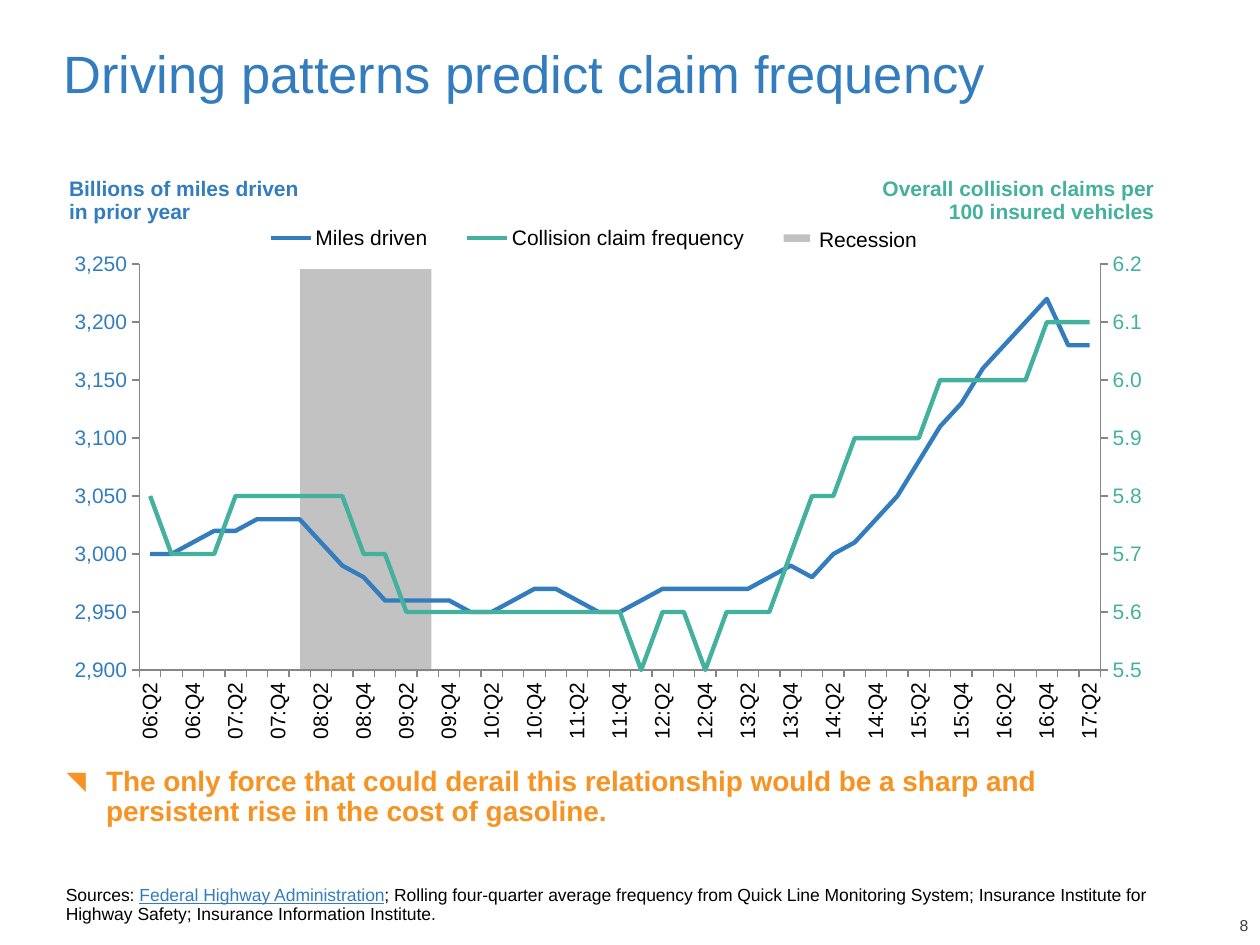
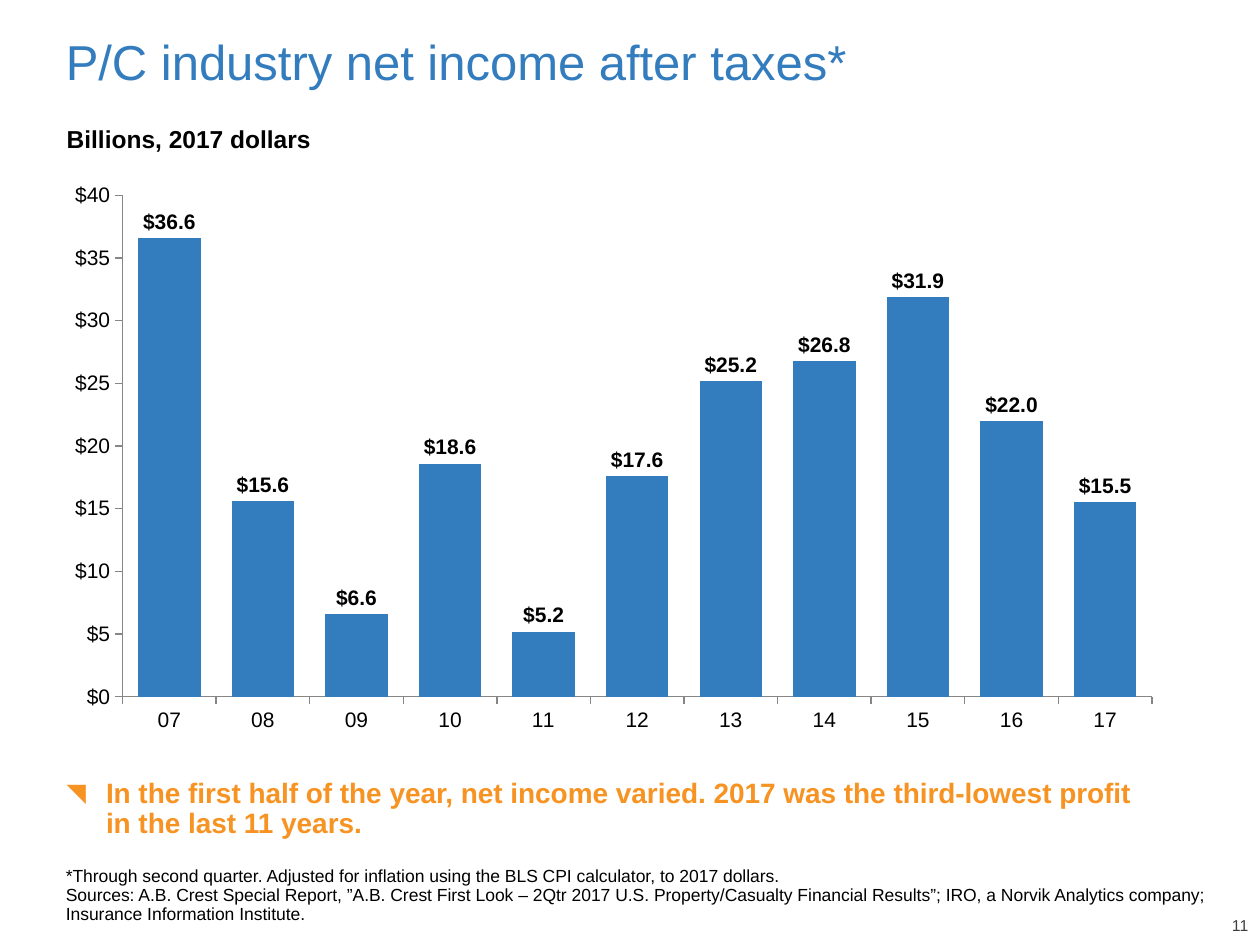
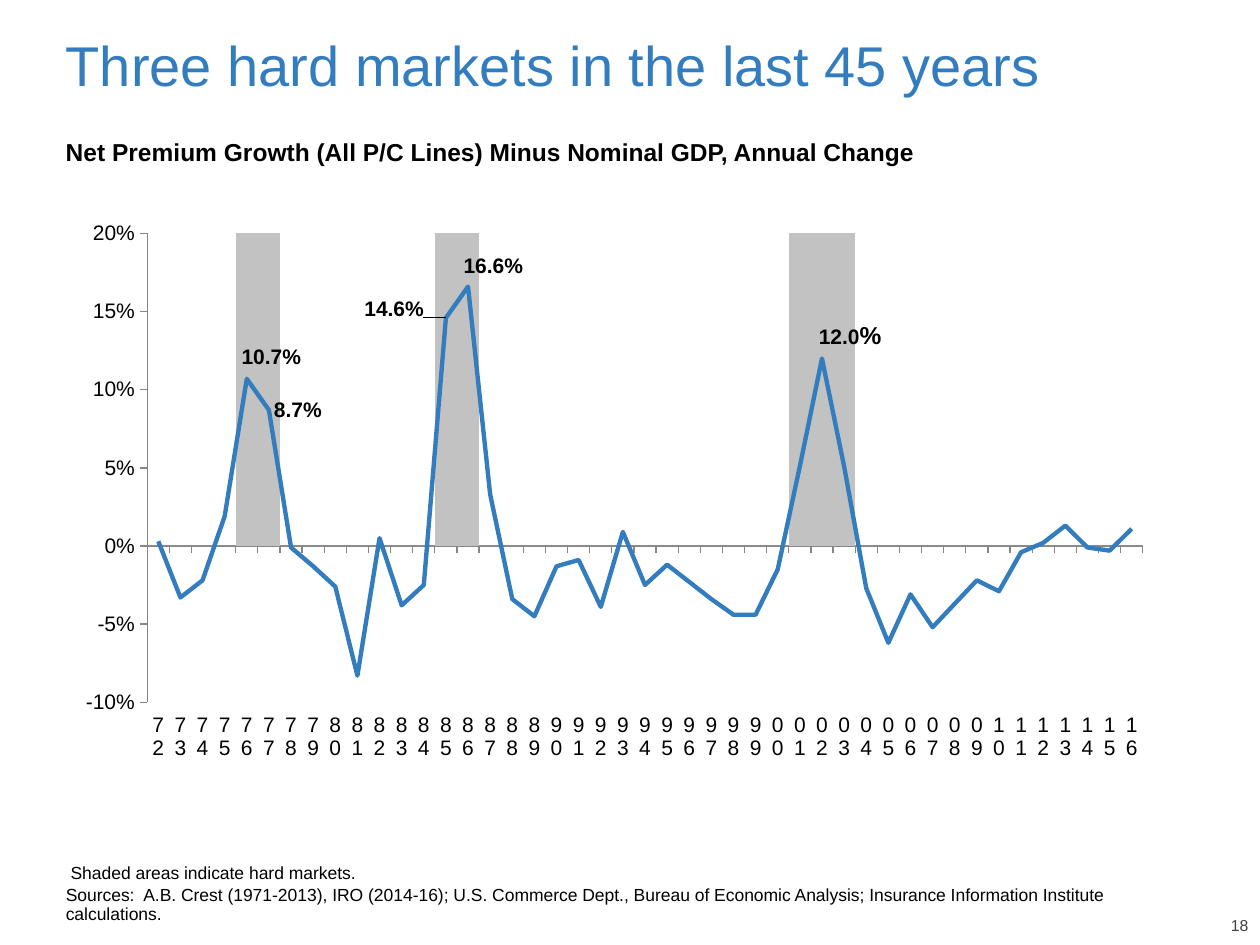
from copy import deepcopy
from lxml import etree
from pptx import Presentation
from pptx.chart.axis import ValueAxis
from pptx.chart.data import CategoryChartData
from pptx.dml.color import RGBColor
from pptx.enum.chart import (XL_CHART_TYPE, XL_LABEL_POSITION, XL_LEGEND_POSITION,
                             XL_MARKER_STYLE, XL_TICK_LABEL_POSITION, XL_TICK_MARK)
from pptx.enum.shapes import MSO_SHAPE
from pptx.enum.text import MSO_ANCHOR, PP_ALIGN
from pptx.oxml import parse_xml
from pptx.oxml.ns import qn
from pptx.util import Pt

LINE, COLUMN = XL_CHART_TYPE.LINE, XL_CHART_TYPE.COLUMN_CLUSTERED
LEFT, RIGHT = XL_LABEL_POSITION.LEFT, XL_LABEL_POSITION.RIGHT
ABOVE = XL_LABEL_POSITION.OUTSIDE_END
BOTTOM = XL_LEGEND_POSITION.BOTTOM
BARE = XL_MARKER_STYLE.NONE
LOW = XL_TICK_LABEL_POSITION.LOW
OUT = XL_TICK_MARK.OUTSIDE
RECT = MSO_SHAPE.RECTANGLE
TOP, MID, BASE = MSO_ANCHOR.TOP, MSO_ANCHOR.MIDDLE, MSO_ANCHOR.BOTTOM
FLUSH = PP_ALIGN.RIGHT

FONT = "Arial"
BLUE, GREEN, ORANGE = "337DBE", "43B19E", "F69322"
GRAY, BLACK, DARK, RULE = "C2C2C2", "000000", "404040", "868686"
NS = ('xmlns:c="http://schemas.openxmlformats.org/drawingml/2006/chart" '
      'xmlns:a="http://schemas.openxmlformats.org/drawingml/2006/main"')

QUARTERS = [f"{n // 4:02}:Q{n % 4 + 1}" for n in range(25, 70)]
MILES = [3000, 3000, 3010, 3020, 3020, 3030, 3030, 3030, 3010, 2990, 2980, 2960,
         2960, 2960, 2960, 2950, 2950, 2960, 2970, 2970, 2960, 2950, 2950, 2960,
         2970, 2970, 2970, 2970, 2970, 2980, 2990, 2980, 3000, 3010, 3030, 3050,
         3080, 3110, 3130, 3160, 3180, 3200, 3220, 3180, 3180]
CLAIMS = [5.8, 5.7, 5.7, 5.7, 5.8, 5.8, 5.8, 5.8, 5.8, 5.8, 5.7, 5.7,
          5.6, 5.6, 5.6, 5.6, 5.6, 5.6, 5.6, 5.6, 5.6, 5.6, 5.6, 5.5,
          5.6, 5.6, 5.5, 5.6, 5.6, 5.6, 5.7, 5.8, 5.8, 5.9, 5.9, 5.9,
          5.9, 6.0, 6.0, 6.0, 6.0, 6.0, 6.1, 6.1, 6.1]
INCOME = {"07": 36.6, "08": 15.6, "09": 6.6, "10": 18.6, "11": 5.2, "12": 17.6,
          "13": 25.2, "14": 26.8, "15": 31.9, "16": 22.0, "17": 15.5}
YEARS = range(1972, 2017)
HARD = {1976, 1977, 1985, 1986, 2001, 2002, 2003}
GROWTH = [0.003, -0.033, -0.022, 0.019, 0.107, 0.087, -0.001, -0.013, -0.026,
          -0.083, 0.005, -0.038, -0.025, 0.146, 0.166, 0.033, -0.034, -0.045,
          -0.013, -0.009, -0.039, 0.009, -0.025, -0.012, -0.023, -0.034, -0.044,
          -0.044, -0.015, 0.051, 0.12, 0.051, -0.027, -0.062, -0.031, -0.052,
          -0.037, -0.022, -0.029, -0.004, 0.002, 0.013, -0.001, -0.003, 0.011]
PEAKS = [(131, 194.4, [("10.7%", {})]),
         (257.8, 142.6, [("16.6%", {})]),
         (460.8, 181, [("12.0", {}), ("%", {"size": 14})])]

PAGES = [
    {"title": "Driving patterns predict claim frequency", "size": 30,
     "spot": (29.2, 23.8), "page": "8", "gap": 2, "wide": 666,
     "note": [[("Sources: ", {}),
               ("Federal Highway Administration", {"color": BLUE, "line": True}),
               ("; Rolling four-quarter average frequency from Quick Line Monitoring "
                "System; Insurance Institute for Highway Safety; Insurance "
                "Information Institute.", {})]],
     "claim": (434.9, "The only force that could derail this relationship would be "
                      "a sharp and persistent rise in the cost of gasoline.")},
    {"title": "P/C industry net income after taxes*", "size": 28,
     "spot": (30.5, 18), "page": "11", "gap": 0, "wide": 666,
     "note": [[("*Through second quarter. Adjusted for inflation using the BLS CPI "
                "calculator, to 2017 dollars.", {})],
              [("Sources: A.B. Crest Special Report, ”A.B. Crest First Look – 2Qtr "
                "2017 U.S. Property/Casualty Financial Results”; IRO, a Norvik "
                "Analytics company; Insurance Information Institute.", {})]],
     "claim": (441.8, "In the first half of the year, net income varied. 2017 was "
                      "the third-lowest profit in the last 11 years.")},
    {"title": "Three hard markets in the last 45 years", "size": 32,
     "spot": (30.5, 18), "page": "18", "gap": 2, "wide": 646.6,
     "note": [[(" Shaded areas indicate hard markets.", {})],
              [("Sources:  A.B. Crest (1971-2013), IRO (2014-16); U.S. Commerce "
                "Dept., Bureau of Economic Analysis; Insurance Information "
                "Institute calculations.", {})]],
     "claim": None},
]


def rgb(code):
    return RGBColor.from_string(code)


def style(font, size, color, bold=False):
    font.name, font.size, font.bold = FONT, Pt(size), bold
    font.color.rgb = rgb(color)


def write(slide, box, paras, size, color=BLACK, bold=False, anchor=TOP, align=None,
          pad=(7.2, 3.6), gap=0, wrap=True, space=0.9):
    frame = slide.shapes.add_textbox(*map(Pt, box)).text_frame
    frame.word_wrap, frame.vertical_anchor = wrap, anchor
    frame.margin_left = frame.margin_right = Pt(pad[0])
    frame.margin_top = frame.margin_bottom = Pt(pad[1])
    if isinstance(paras, str):
        paras = [[(paras, {})]]
    for i, runs in enumerate(paras):
        para = frame.add_paragraph() if i else frame.paragraphs[0]
        para.line_spacing, para.space_before, para.alignment = space, Pt(gap), align
        for words, look in runs:
            run = para.add_run()
            run.text = words
            style(run.font, look.get("size", size), look.get("color", color), bold)
            run.font.underline = look.get("line", False)
    return frame


def block(slide, box):
    shape = slide.shapes.add_shape(RECT, *map(Pt, box))
    shape.shadow.inherit = False
    shape.fill.solid()
    shape.fill.fore_color.rgb = rgb(GRAY)
    shape.line.fill.background()


def frame_page(slide, page):
    left, top = page["spot"]
    write(slide, (left, top, 666, 74.9), page["title"], page["size"], BLUE)
    write(slide, (30.5, 496, page["wide"], 32.4), page["note"], 10, anchor=BASE,
          pad=(7.2, 0), gap=page["gap"])
    write(slide, (678.7, 524.9, 34.6, 9.4), page["page"], 9, DARK, anchor=BASE,
          align=FLUSH, pad=(0, 0))
    if page["claim"]:
        top, words = page["claim"]
        frame = write(slide, (31, top, 629.3, 40), words, 16, ORANGE, True, gap=6)
        props = frame.paragraphs[0]._p.get_or_add_pPr()
        props.set("marL", str(Pt(22.5)))
        props.set("indent", str(-Pt(22.5)))
        for tag, key, val in (("a:buSzPct", "val", "90000"),
                              ("a:buFont", "typeface", FONT),
                              ("a:buChar", "char", "◥")):
            etree.SubElement(props, qn(tag)).set(key, val)


def layout(spots, inner=False):
    target = '<c:layoutTarget val="inner"/>' if inner else ""
    modes = '<c:xMode val="edge"/><c:yMode val="edge"/>'
    parts = "".join(f'<c:{k} val="{v}"/>' for k, v in zip("xywh", spots))
    return parse_xml(f"<c:layout {NS}><c:manualLayout>{target}{modes}{parts}"
                     "</c:manualLayout></c:layout>")


def clear():
    return parse_xml(f"<c:spPr {NS}><a:noFill/><a:ln><a:noFill/></a:ln></c:spPr>")


def scale(axis, low, high, step, form, color=BLACK):
    axis.minimum_scale, axis.maximum_scale, axis.major_unit = low, high, step
    axis.has_major_gridlines = False
    axis.tick_labels.number_format = form
    axis.tick_labels.number_format_is_linked = False
    style(axis.tick_labels.font, 12, color)


def plot(slide, kind, box, area, cats, rows, limits):
    data = CategoryChartData()
    data.categories = cats
    for name, vals in rows:
        data.add_series(name, vals)
    chart = slide.shapes.add_chart(kind, *map(Pt, box), data).chart
    chart.has_title = chart.has_legend = False
    style(chart.font, 12, BLACK)
    scale(chart.value_axis, *limits)
    style(chart.category_axis.tick_labels.font, 12, BLACK)
    for axis in (chart.category_axis, chart.value_axis):
        axis.major_tick_mark = OUT
        axis.format.line.color.rgb = rgb(RULE)
        axis.format.line.width = Pt(0.75)
    chart.plots[0].vary_by_categories = False
    space = chart._chartSpace
    space.find(qn("c:chart")).addnext(clear())
    zone = space.chart.plotArea
    for old in zone.findall(qn("c:layout")):
        zone.remove(old)
    zone.insert(0, layout(area, True))
    zone.append(clear())
    return chart, zone


def split(chart, ids):
    first = chart.plots[0]
    row = first.series[1]._element
    for flag in row.findall(qn("c:invertIfNegative")):
        row.remove(flag)
    axes = "".join(f'<c:axId val="{n}"/>' for n in ids)
    group = parse_xml(f'<c:lineChart {NS}><c:grouping val="standard"/>'
                      f'<c:varyColors val="0"/><c:marker val="1"/>{axes}</c:lineChart>')
    first._element.addnext(group)
    group.insert(2, row)


def stroke(row, color):
    row.smooth = False
    row.marker.style = BARE
    row.format.line.color.rgb = rgb(color)
    row.format.line.width = Pt(2.5)


def paint(row, color):
    row.format.fill.solid()
    row.format.fill.fore_color.rgb = rgb(color)


def turn(axis, angle, skip):
    node = axis._element
    node.find(qn("c:txPr")).find(qn("a:bodyPr")).set("rot", str(angle * 60000))
    mark = parse_xml(f'<c:tickLblSkip {NS} val="{skip}"/>')
    node.find(qn("c:noMultiLvlLbl")).addprevious(mark)


def second(chart, ids, limits):
    cat, val = (deepcopy(a._element) for a in (chart.category_axis, chart.value_axis))
    for node, own, other in ((cat, *ids), (val, *ids[::-1])):
        node.find(qn("c:axId")).set("val", str(own))
        node.find(qn("c:crossAx")).set("val", str(other))
    cat.find(qn("c:delete")).set("val", "1")
    val.find(qn("c:axPos")).set("val", "r")
    val.find(qn("c:crosses")).set("val", "max")
    chart.value_axis._element.addnext(val)
    val.addnext(cat)
    scale(ValueAxis(val), *limits)


def driving(slide):
    block(slide, (171.5, 153.8, 75, 229.7))
    write(slide, (32.4, 98.6, 154.1, 36.7), "Billions of miles driven in prior year",
          12, BLUE, True)
    chart, _ = plot(slide, LINE, (24.7, 123.6, 655.2, 311), (0.084, 0.088, 0.838, 0.746),
                    QUARTERS, [("Miles driven", MILES),
                               ("Collision claim frequency", CLAIMS)],
                    (2900, 3250, 50, "#,##0", BLUE))
    ids = (5001, 5002)
    split(chart, ids)
    turn(chart.category_axis, -90, 2)
    second(chart, ids, (5.5, 6.2, 0.1, "0.0", GREEN))
    for group, color in zip(chart.plots, (BLUE, GREEN)):
        stroke(group.series[0], color)
    chart.has_legend = True
    key = chart.legend
    key.position, key.include_in_layout = BOTTOM, False
    style(key.font, 12, BLACK)
    for old in key._element.findall(qn("c:layout")):
        key._element.remove(old)
    key._element.find(qn("c:legendPos")).addnext(layout((0.17, 0.01, 0.47, 0.06)))
    write(slide, (490.3, 98.6, 176.4, 36.7),
          "Overall collision claims per 100 insured vehicles", 12, GREEN, True, align=FLUSH)
    block(slide, (447.8, 133.9, 15.1, 4.3))
    write(slide, (468, 131, 70.6, 13.7), "Recession", 12, pad=(0, 0), wrap=False)


def income(slide):
    chart, _ = plot(slide, COLUMN, (37.4, 105.1, 640.1, 330.5), (0.051, 0.02, 0.919, 0.867),
                    list(INCOME), [("Series 1", list(INCOME.values()))],
                    (0, 40, 5, '"$"#,##0'))
    chart.category_axis.tick_label_position = LOW
    bars = chart.plots[0]
    bars.gap_width = 50
    paint(bars.series[0], BLUE)
    bars.has_data_labels = True
    tags = bars.data_labels
    tags.show_value, tags.position = True, ABOVE
    tags.number_format, tags.number_format_is_linked = '"$"#,##0.0', False
    style(tags.font, 12, BLACK, True)
    write(slide, (31, 69.1, 208.1, 22.3), "Billions, 2017 dollars", 14, bold=True, anchor=MID)


def markets(slide):
    shade = [int(year in HARD) for year in YEARS]
    chart, _ = plot(slide, COLUMN, (28.4, 121.3, 648.7, 319.7), (0.086, 0.038, 0.877, 0.838),
                    [f"{year % 100:02}" for year in YEARS],
                    [("Series 1", shade), ("Series 2", GROWTH)], (-0.1, 0.2, 0.05, "0%"))
    axis = chart.category_axis
    axis.tick_label_position = LOW
    turn(axis, 0, 1)
    split(chart, [n.get("val") for n in chart.plots[0]._element.findall(qn("c:axId"))])
    bars, line = chart.plots
    bars.gap_width = 0
    paint(bars.series[0], GRAY)
    row = line.series[0]
    stroke(row, BLUE)
    for year, side, shift in ((1977, RIGHT, None), (1985, LEFT, (-0.015, -0.015))):
        tag = row.points[year - YEARS[0]].data_label
        tag.position = side
        style(tag.font, 12, BLACK, True)
        node = tag._dLbl
        node.find(qn("c:idx")).addnext(
            parse_xml(f'<c:numFmt {NS} formatCode="0.0%" sourceLinked="0"/>'))
        if shift:
            x, y = shift
            node.find(qn("c:idx")).addnext(parse_xml(
                f'<c:layout {NS}><c:manualLayout><c:x val="{x}"/><c:y val="{y}"/>'
                "</c:manualLayout></c:layout>"))
    for left, top, runs in PEAKS:
        write(slide, (left, top, 54.7, 17.3), [runs], 12, bold=True)
    write(slide, (30.5, 74.9, 544.3, 24.5),
          "Net Premium Growth (All P/C Lines) Minus Nominal GDP, Annual Change",
          14, bold=True, space=1)


def main():
    deck = Presentation()
    deck.slide_width, deck.slide_height = Pt(720), Pt(540)
    for page, draw in zip(PAGES, (driving, income, markets)):
        slide = deck.slides.add_slide(deck.slide_layouts[6])
        draw(slide)
        frame_page(slide, page)
    deck.save("out.pptx")


if __name__ == "__main__":
    main()
